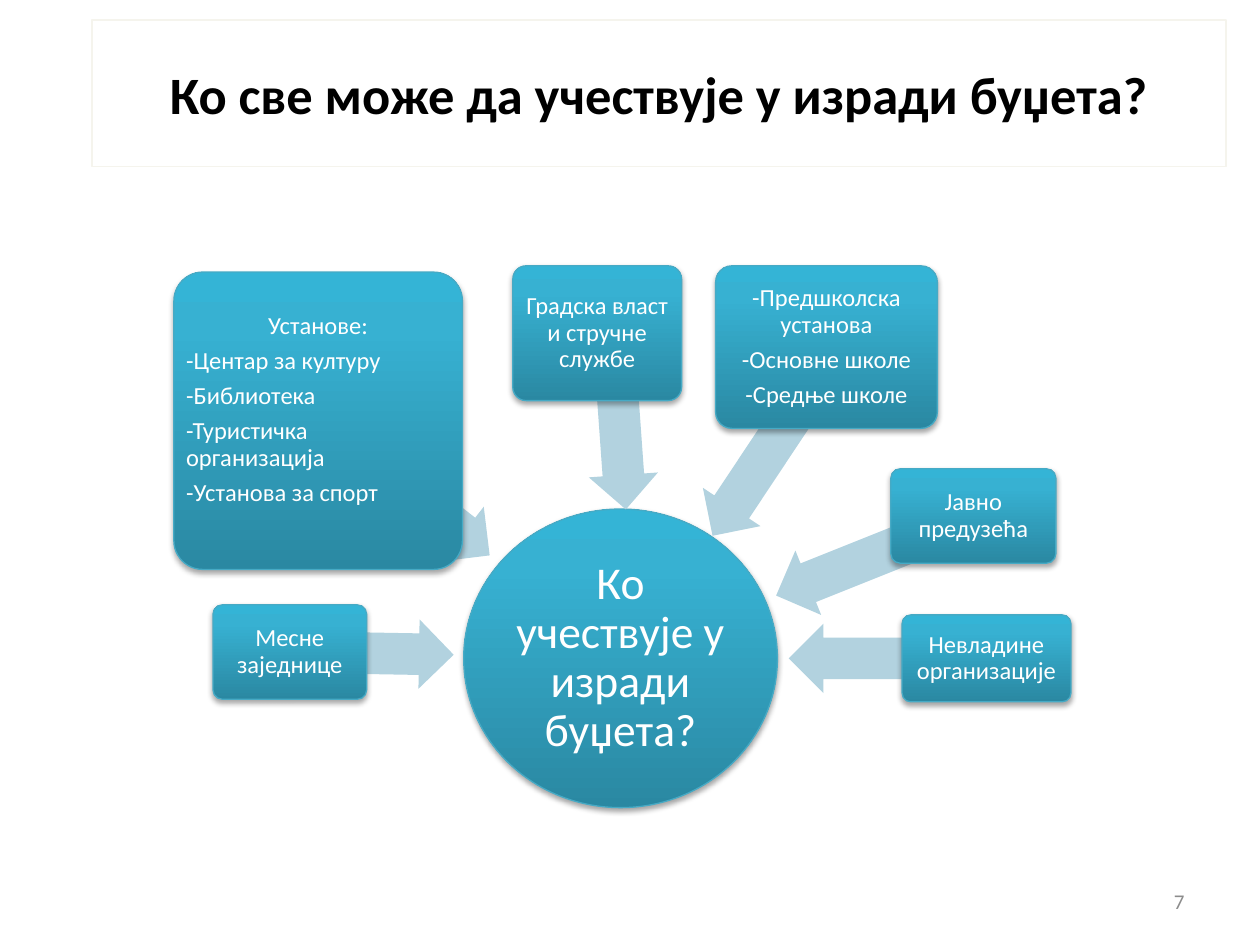
from copy import deepcopy

from lxml import etree
from pptx import Presentation
from pptx.dml.color import RGBColor
from pptx.enum import shapes, text
from pptx.oxml import ns
from pptx.util import Inches, Pt

CENTER, LEFT, RIGHT = text.PP_ALIGN.CENTER, text.PP_ALIGN.LEFT, text.PP_ALIGN.RIGHT
GRADIENT = [(0, "2A88A2"), (0.8, "37B1D2"), (1, "34B4D6")]


def write(shape, lines, size, color, align=CENTER, bold=False):
    frame = shape.text_frame
    frame.text = "\n".join(lines)
    frame.word_wrap = True
    frame.vertical_anchor = text.MSO_ANCHOR.MIDDLE
    for para in frame.paragraphs:
        para.alignment = align
        for span in para.runs:
            span.font.name = "Calibri"
            span.font.size = Pt(size)
            span.font.bold = bold
            span.font.color.rgb = RGBColor.from_string(color)


def add_bubble(page, kind, place, lines, size, inset):
    """Add a shaded, shadowed shape with white text."""
    bubble = page.shapes.add_shape(kind, *map(Inches, place))
    bubble.line.color.rgb = RGBColor.from_string("46AAC5")
    bubble.line.width = Pt(0.75)
    bubble.fill.gradient()
    bubble.fill.gradient_angle = 90
    stop_list = bubble._element.spPr.find(".//" + ns.qn("a:gsLst"))
    stop_list.append(deepcopy(stop_list[-1]))
    for stop, (position, color) in zip(bubble.fill.gradient_stops, GRADIENT):
        stop.position = position
        stop.color.rgb = RGBColor.from_string(color)

    bubble.shadow.inherit = False
    effects = bubble._element.spPr.find(ns.qn("a:effectLst"))
    shadow = etree.SubElement(effects, ns.qn("a:outerShdw"), blurRad="40000",
                              dist="23000", dir="5400000", rotWithShape="0")
    black = etree.SubElement(shadow, ns.qn("a:srgbClr"), val="000000")
    etree.SubElement(black, ns.qn("a:alpha"), val="35000")

    write(bubble, lines, size, "FFFFFF")
    frame = bubble.text_frame
    frame.margin_left = frame.margin_right = Inches(inset)
    frame.margin_top = frame.margin_bottom = Inches(inset)
    for para in frame.paragraphs:
        para.line_spacing = 0.9
        para.space_after = Pt(5)
    return bubble


deck = Presentation()
deck.slide_width, deck.slide_height = Inches(10), Inches(7.5)
page = deck.slides.add_slide(deck.slide_layouts[5])

title = page.shapes.title
title.left, title.top = Inches(0.73), Inches(0.16)
title.width, title.height = Inches(9), Inches(1.16)
title.line.color.rgb = RGBColor.from_string("F5F4ED")
title.line.width = Pt(0.75)
write(title, ["Ко све може да учествује у изради буџета?"], 30, "000000", bold=True)

number = page.shapes.add_textbox(Inches(7.17), Inches(6.95), Inches(2.33), Inches(0.4))
write(number, ["7"], 12, "8C8C8C", RIGHT)

add_bubble(page, shapes.MSO_SHAPE.OVAL, (3.68, 4.04, 2.49, 2.37),
           ["Ко учествује у изради буџета?"], 26, 0.02)

# Arrow left, top, width and rotation; then the participant's box and lines
participants = [
    ((2.3, 4.91, 1.3, 181), (1.69, 4.8, 1.22, 0.75), ["Месне заједнице"]),
    ((2.34, 3.6, 1.73, 218), (1.38, 2.16, 2.29, 2.36),
     ["Установе:", "-Центар за културу", "-Библиотека",
      "-Туристичка организација", "-Установа за спорт"]),
    ((4.26, 3.11, 1.32, 265.9), (4.07, 2.11, 1.34, 1.07),
     ["Градска власт и стручне службе"]),
    ((5.26, 3.24, 1.77, 303.6), (5.68, 2.11, 1.76, 1.29),
     ["-Предшколска установа", "-Основне школе", "-Средње школе"]),
    ((6.1, 4.14, 1.68, 338.2), (7.07, 3.72, 1.31, 0.75), ["Јавно предузећа"]),
    ((6.26, 4.95, 1.57, 0), (7.16, 4.88, 1.34, 0.69), ["Невладине организације"]),
]
for (left, top, width, rotation), place, lines in participants:
    arrow = page.shapes.add_shape(shapes.MSO_SHAPE.LEFT_ARROW, Inches(left),
                                  Inches(top), Inches(width), Inches(0.55))
    arrow.rotation = rotation
    arrow.adjustments[0] = 0.6
    arrow.fill.solid()
    arrow.fill.fore_color.rgb = RGBColor.from_string("B2D2DF")
    arrow.line.fill.background()
    arrow.shadow.inherit = False

    box = add_bubble(page, shapes.MSO_SHAPE.ROUNDED_RECTANGLE, place, lines, 14, 0.03)
    box.adjustments[0] = 0.1
    if lines[0] == "Установе:":
        box.text_frame.margin_bottom = Inches(0.2)
        for para in box.text_frame.paragraphs[1:]:
            para.alignment = LEFT

deck.save("out.pptx")
